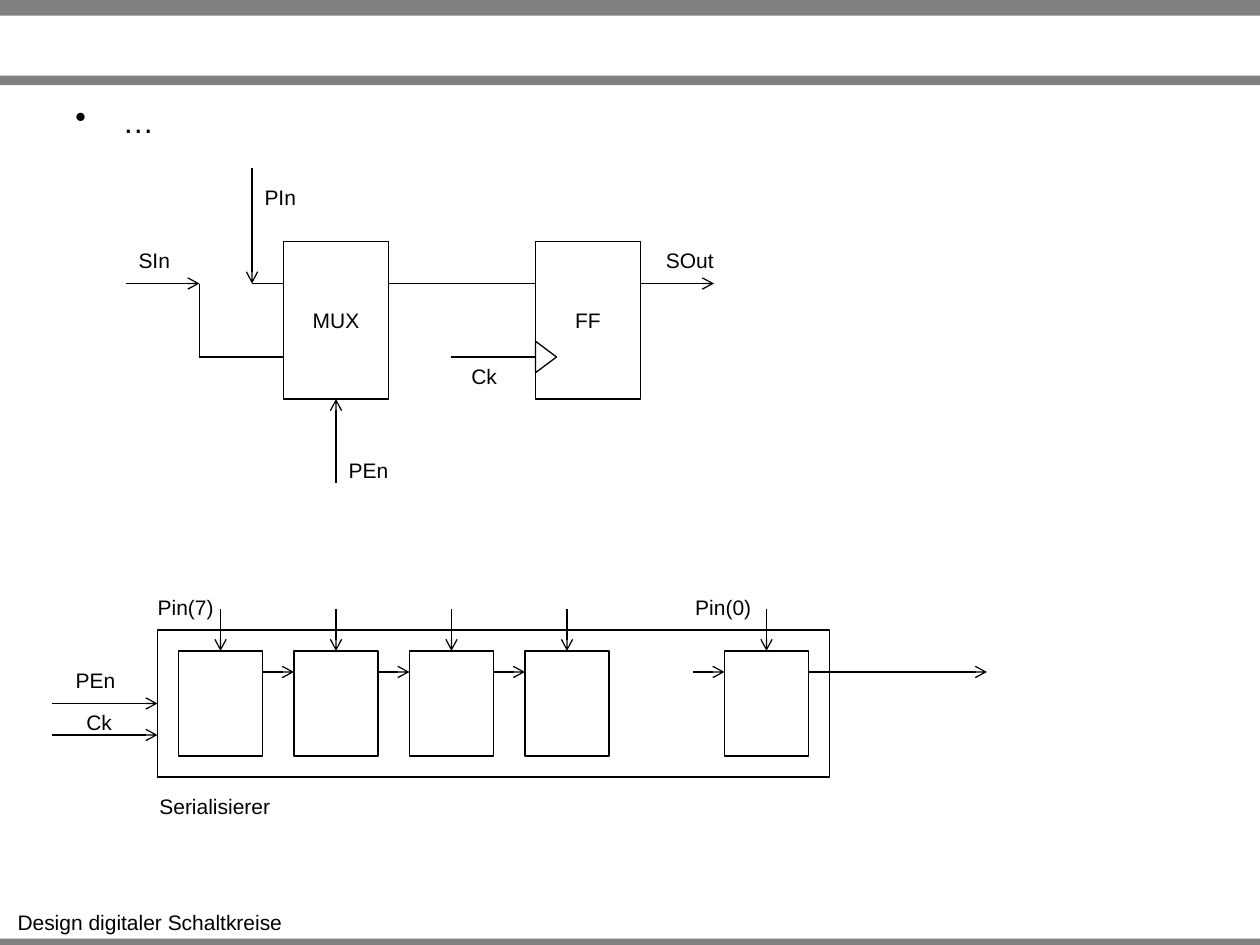
import pptx
import pptx.dml.color
import pptx.enum.shapes
import pptx.enum.text
import pptx.oxml
import pptx.util
from lxml import etree

Pt = pptx.util.Pt
Shape = pptx.enum.shapes.MSO_SHAPE
PP_ALIGN = pptx.enum.text.PP_ALIGN
ANCHOR = pptx.enum.text.MSO_ANCHOR

BLACK = pptx.dml.color.RGBColor(0x00, 0x00, 0x00)
GRAY = pptx.dml.color.RGBColor(0x80, 0x80, 0x80)
FONT = "Arial"
TOP, LEFT, BOTTOM = 0, 1, 2

STAGE_W, STAGE_H, STAGE_TOP, STAGE_GAP = 48, 60, 372, 18
STAGE_LEFTS = [102 + i * (STAGE_W + STAGE_GAP) for i in range(4)] + [414]
SHIFT_Y = STAGE_TOP + 12


def add_run(paragraph, text, size=12):
    run = paragraph.add_run()
    run.text = text
    run.font.name = FONT
    run.font.size = Pt(size)
    run.font.color.rgb = BLACK


def add_bar(slide, top, height):
    bar = slide.shapes.add_shape(Shape.RECTANGLE, 0, Pt(top), Pt(720), Pt(height))
    bar.shadow.inherit = False
    bar.fill.solid()
    bar.fill.fore_color.rgb = GRAY
    bar.line.fill.background()


def add_block(slide, left, top, width, height, text="", kind=Shape.RECTANGLE):
    """Add an unfilled, thinly outlined circuit symbol."""
    block = slide.shapes.add_shape(kind, Pt(left), Pt(top), Pt(width), Pt(height))
    block.shadow.inherit = False
    block.fill.background()
    block.line.color.rgb = BLACK
    block.line.width = Pt(0.75)
    if text:
        block.text_frame.vertical_anchor = ANCHOR.MIDDLE
        paragraph = block.text_frame.paragraphs[0]
        paragraph.alignment = PP_ALIGN.CENTER
        add_run(paragraph, text)
    return block


def add_wire(slide, start, end, arrow=False, target=None, site=None):
    """Add a signal line, joined to a connection site of target if given."""
    wire = slide.shapes.add_connector(
        pptx.enum.shapes.MSO_CONNECTOR.STRAIGHT, *map(Pt, start + end))
    wire.line.color.rgb = BLACK
    wire.line.width = Pt(0.75)
    if arrow:
        tail = etree.SubElement(
            wire.line._get_or_add_ln(), pptx.oxml.ns.qn("a:tailEnd"))
        tail.set("type", "arrow")
    etree.SubElement(wire._element.spPr, pptx.oxml.ns.qn("a:effectLst"))
    if target is not None:
        wire.end_connect(target, site)


def add_label(slide, text, left, top, width):
    label = slide.shapes.add_textbox(Pt(left), Pt(top), Pt(width), Pt(21.6))
    label.text_frame.word_wrap = False
    label.text_frame.auto_size = pptx.enum.text.MSO_AUTO_SIZE.SHAPE_TO_FIT_TEXT
    paragraph = label.text_frame.paragraphs[0]
    paragraph.alignment = PP_ALIGN.CENTER
    add_run(paragraph, text)


def add_bullet_text(slide, text):
    body = slide.shapes.add_textbox(Pt(36), Pt(54.7), Pt(648), Pt(71.3))
    body.text_frame.word_wrap = True
    paragraph = body.text_frame.paragraphs[0]
    properties = paragraph._p.get_or_add_pPr()
    properties.set("marL", str(Pt(27)))
    properties.set("indent", str(-Pt(27)))
    bullet = etree.SubElement(properties, pptx.oxml.ns.qn("a:buChar"))
    bullet.set("char", "•")
    add_run(paragraph, text, 18)


def add_bit_cell(slide):
    """Draw one serializer bit: a multiplexer feeding a flip-flop."""
    add_block(slide, 306, 138, 60, 90, "FF")
    clock_input = add_block(slide, 303, 198, 18, 12, kind=Shape.ISOSCELES_TRIANGLE)
    clock_input.rotation = 90
    mux = add_block(slide, 162, 138, 60, 90, "MUX")

    for start, end in [
        ((258, 204), (306, 204)),
        ((222, 162), (306, 162)),
        ((144, 162), (162, 162)),
        ((114, 204), (114, 162)),
        ((114, 204), (162, 204)),
    ]:
        add_wire(slide, start, end)
    for start, end in [
        ((366, 162), (408, 162)),
        ((144, 96), (144, 162)),
        ((72, 162), (114, 162)),
    ]:
        add_wire(slide, start, end, arrow=True)
    add_wire(slide, (192, 276), (192, 228), True, mux, BOTTOM)

    for label in [
        ("PEn", 192, 258, 37.2),
        ("Ck", 262, 204, 29.3),
        ("PIn", 144, 102, 32.3),
        ("SIn", 72, 138, 32.3),
        ("SOut", 373, 138, 42.3),
    ]:
        add_label(slide, *label)


def add_serializer(slide):
    """Draw the chain of bit cells inside its enclosing block."""
    for index, left in enumerate(STAGE_LEFTS):
        stage = add_block(slide, left, STAGE_TOP, STAGE_W, STAGE_H)
        center = left + STAGE_W / 2
        add_wire(slide, (center, 348), (center, STAGE_TOP), True, stage, TOP)
        if index > 0:
            add_wire(slide, (left - STAGE_GAP, SHIFT_Y), (left, SHIFT_Y), arrow=True)
    add_wire(slide, (STAGE_LEFTS[-1] + STAGE_W, SHIFT_Y), (564, SHIFT_Y), arrow=True)

    serializer = add_block(slide, 90, 360, 384, 84)
    add_wire(slide, (30, 402), (90, 402), True, serializer, LEFT)
    add_wire(slide, (30, 420), (90, 420), arrow=True)

    for label in [
        ("Serialisierer", 83.5, 450, 78.5),
        ("PEn", 36, 378, 37.2),
        ("Ck", 42, 402, 29.3),
        ("Pin(7)", 82.8, 336, 46.6),
        ("Pin(0)", 390, 336, 46.6),
    ]:
        add_label(slide, *label)


def main():
    presentation = pptx.Presentation()
    presentation.slide_width, presentation.slide_height = Pt(720), Pt(540)
    slide = presentation.slides.add_slide(presentation.slide_layouts[6])
    for top, height in [(536.4, 5.5), (0, 9), (43.2, 5.5)]:
        add_bar(slide, top, height)
    add_label(slide, "Design digitaler Schaltkreise", 2.2, 516.2, 167)
    add_bullet_text(slide, "…")
    add_bit_cell(slide)
    add_serializer(slide)
    presentation.save("out.pptx")


if __name__ == "__main__":
    main()
